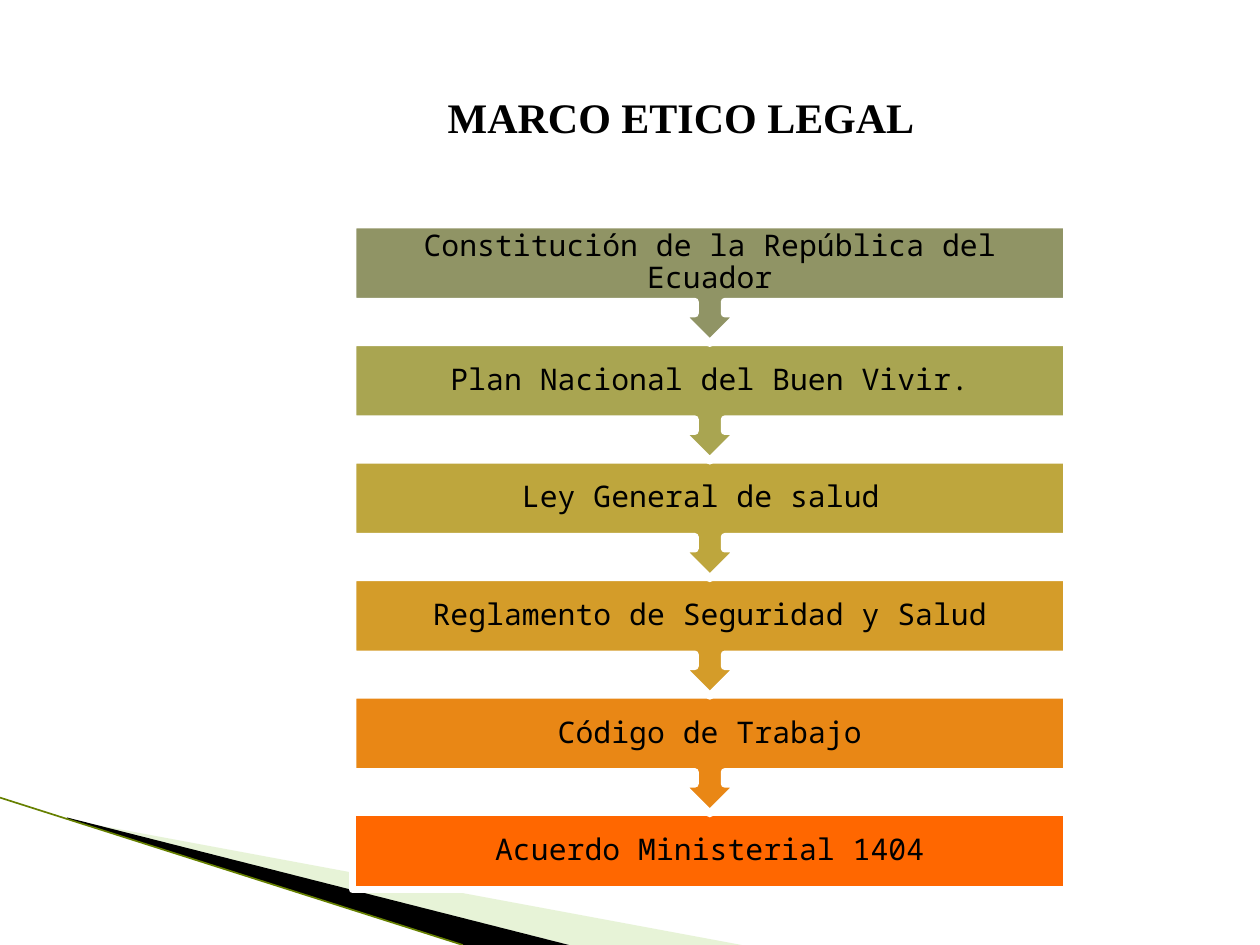
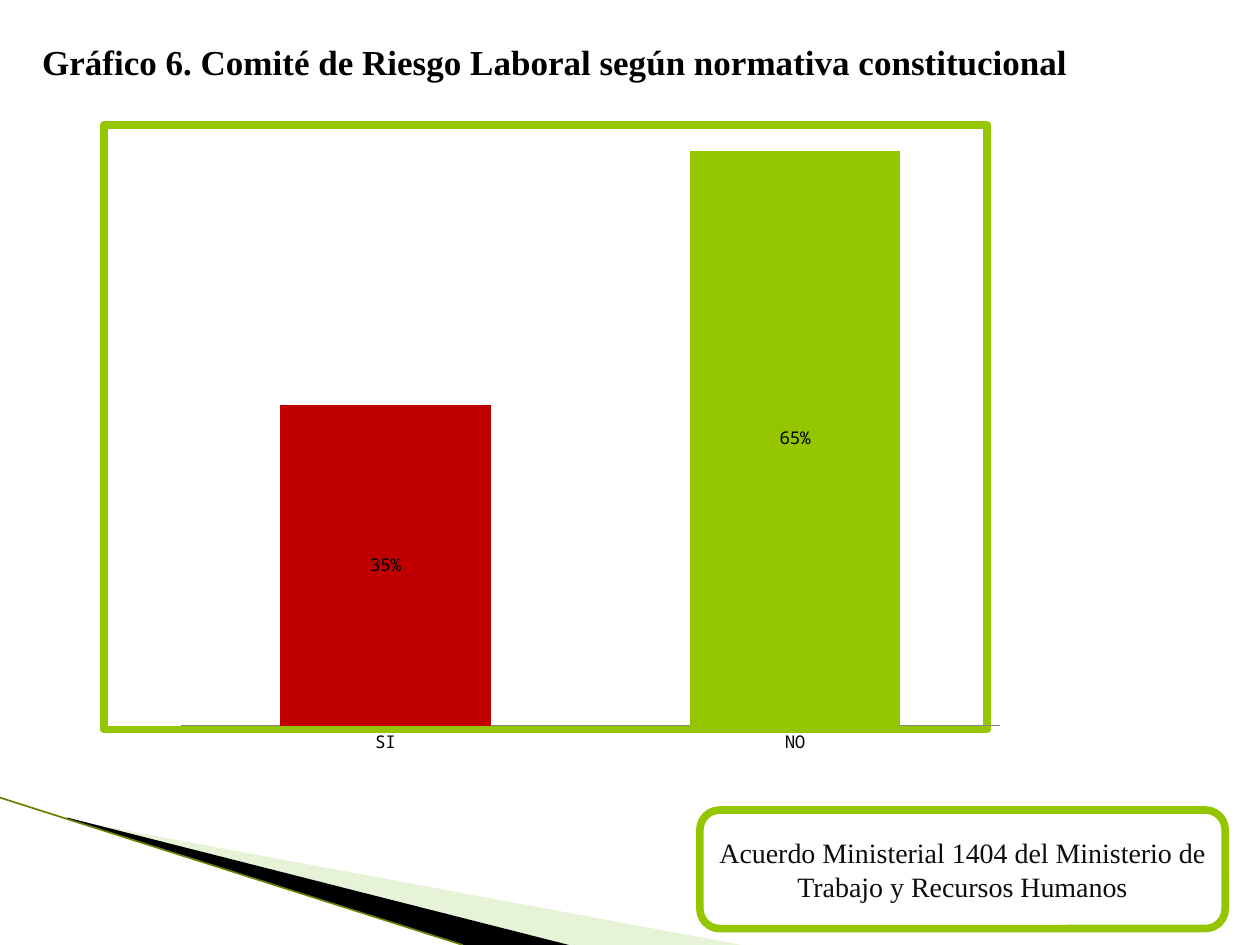
from lxml import etree
from pptx import Presentation
from pptx import util as u
from pptx.chart.data import CategoryChartData
from pptx.dml.color import RGBColor
from pptx.enum import chart as charts, shapes, text
from pptx.oxml import parse_xml
from pptx.oxml.ns import nsdecls, qn

SERIF, MONO = "Times New Roman", "Noto Sans Mono"
BLACK, WHITE, GREEN, RED = "000000", "FFFFFF", "94C600", "C00000"
BORDER = 4.33
LAWS = [
    ("Constitución de la República del Ecuador", "909465"),
    ("Plan Nacional del Buen Vivir.", "A9A551"),
    ("Ley General de salud ", "BEA63D"),
    ("Reglamento de Seguridad y Salud", "D49C29"),
    ("Código de Trabajo", "E98715"),
    ("Acuerdo Ministerial 1404", "FF6700"),
]


def paint(color_format, hex_color):
    """Set a colour from a hex string."""
    color_format.rgb = RGBColor.from_string(hex_color)


def fill_solid(fill, hex_color):
    """Give a fill one solid colour."""
    fill.solid()
    paint(fill.fore_color, hex_color)


def style_font(font, name, size, color=BLACK, bold=False):
    """Set the face, size, colour and weight of a font."""
    font.name, font.size, font.bold = name, u.Pt(size), bold
    paint(font.color, color)


def write(frame, wording, name, size, color=BLACK, bold=False, align=text.PP_ALIGN.CENTER):
    """Put one formatted paragraph in a text frame and return it."""
    frame.word_wrap = True
    para = frame.paragraphs[0]
    para.text = wording
    para.alignment = align
    for span in para.runs:
        style_font(span.font, name, size, color, bold)
    return para


def add_title(slide, wording, left, top, width, height, size, align):
    """Add a bold serif title."""
    box = slide.shapes.add_textbox(u.Cm(left), u.Cm(top), u.Cm(width), u.Cm(height))
    write(box.text_frame, wording, SERIF, size, bold=True, align=align)


def add_box(slide, kind, left, top, width, height, fill, line):
    """Add a filled preset shape with a thick border."""
    box = slide.shapes.add_shape(kind, u.Cm(left), u.Cm(top), u.Cm(width), u.Cm(height))
    box.shadow.inherit = False
    fill_solid(box.fill, fill)
    paint(box.line.color, line)
    box.line.width = u.Pt(BORDER)
    box.text_frame.vertical_anchor = text.MSO_ANCHOR.MIDDLE
    return box


def add_wedge(slide, points, color, opacity=100):
    """Add a borderless polygon, optionally see-through."""
    corners = [(u.Cm(x), u.Cm(y)) for x, y in points]
    builder = slide.shapes.build_freeform(*corners[0])
    builder.add_line_segments(corners[1:])
    wedge = builder.convert_to_shape()
    wedge.shadow.inherit = False
    fill_solid(wedge.fill, color)
    wedge.line.fill.background()
    if opacity < 100:
        tint = wedge.fill._xPr.find(qn("a:solidFill"))[0]
        etree.SubElement(tint, qn("a:alpha")).set("val", str(opacity * 1000))


def add_decoration(slide):
    """Draw the wedges and the line in the lower left corner."""
    add_wedge(slide, [(1.4, 16.53), (14.95, 19.05), (11.47, 19.05), (1.4, 16.51)], "C3E19D", 40)
    add_wedge(slide, [(1.35, 16.48), (11.47, 19.05), (9.35, 19.05), (1.37, 16.51)], BLACK)
    edge = slide.shapes.add_connector(
        shapes.MSO_CONNECTOR.STRAIGHT, u.Cm(0), u.Cm(16.08), u.Cm(9.33), u.Cm(19.05))
    paint(edge.line.color, "668000")
    edge.line.width = u.Pt(0.95)
    etree.SubElement(edge._element.spPr, qn("a:effectLst"))


def add_slide(deck):
    """Add a blank slide with the shared decoration."""
    slide = deck.slides.add_slide(deck.slide_layouts[6])
    add_decoration(slide)
    return slide


def add_law_chain(slide):
    """Stack the laws as callouts that point to the next one, the last as a rectangle."""
    top, pitch = 4.53, 2.37
    last = len(LAWS) - 1
    for index, (law, color) in reversed(list(enumerate(LAWS))):
        kind, height = shapes.MSO_SHAPE.DOWN_ARROW_CALLOUT, 2.39
        if index == last:
            kind, height = shapes.MSO_SHAPE.RECTANGLE, 1.55
        box = add_box(slide, kind, 7.11, top + index * pitch, 14.4, height, color, WHITE)
        frame = box.text_frame
        frame.margin_left = frame.margin_right = u.Cm(0.33)
        frame.margin_top = frame.margin_bottom = u.Cm(0)
        write(frame, law, MONO, 17).line_spacing = 0.9


def place_plot(chart, left, top, width, height):
    """Fix the inner plot area as fractions of the chart."""
    plot_area = chart._chartSpace.chart.plotArea
    for layout in plot_area.findall(qn("c:layout")):
        plot_area.remove(layout)
    sizes = {"x": left, "y": top, "w": width, "h": height}
    values = "".join(f'<c:{key} val="{value}"/>' for key, value in sizes.items())
    plot_area.insert(0, parse_xml(
        f'<c:layout {nsdecls("c")}><c:manualLayout><c:layoutTarget val="inner"/>'
        f'<c:xMode val="edge"/><c:yMode val="edge"/>{values}</c:manualLayout></c:layout>'))


def add_committee_chart(slide):
    """Add the column chart of yes and no answers."""
    data = CategoryChartData()
    data.categories = ["SI", "NO"]
    data.add_series("Series 1", [19, 34])
    chart = slide.shapes.add_chart(
        charts.XL_CHART_TYPE.COLUMN_STACKED,
        u.Cm(3.3), u.Cm(0.71), u.Cm(17.2), u.Cm(14.81), data).chart
    style_font(chart.font, MONO, 10)
    chart.has_legend = chart.has_title = False
    place_plot(chart, 0.02, 0.02, 0.96, 0.92)

    chart.value_axis.visible = False
    chart.value_axis.has_major_gridlines = False
    chart.category_axis.major_tick_mark = charts.XL_TICK_MARK.NONE
    paint(chart.category_axis.format.line.color, "868686")

    plot = chart.plots[0]
    plot.gap_width, plot.overlap, plot.vary_by_categories = 95, 100, False
    series = plot.series[0]
    fill_solid(series.format.fill, GREEN)
    labels = series.data_labels
    labels.show_value = True
    labels.position = charts.XL_LABEL_POSITION.CENTER
    style_font(labels.font, MONO, 10)
    fill_solid(series.points[0].format.fill, RED)
    for index, share in enumerate(["35%", "65%"]):
        label = series.points[index].data_label
        label.text_frame.text = share
        style_font(label.text_frame.paragraphs[0].runs[0].font, MONO, 10)
        label.position = charts.XL_LABEL_POSITION.CENTER


def build_legal_slide(deck):
    """Build the slide on the legal framework."""
    slide = add_slide(deck)
    add_title(slide, "MARCO ETICO LEGAL", 7.43, 1.73, 12.6, 3.33, 24, text.PP_ALIGN.CENTER)
    add_law_chain(slide)


def build_committee_slide(deck):
    """Build the slide on the labour risk committee."""
    slide = add_slide(deck)
    add_box(slide, shapes.MSO_SHAPE.RECTANGLE, 2.1, 2.52, 17.8, 12.19, WHITE, GREEN)
    add_committee_chart(slide)
    add_title(slide, "Gráfico 6. Comité de Riesgo Laboral según normativa constitucional",
              0.6, 0.69, 24.38, 3.25, 20, text.PP_ALIGN.LEFT)
    note = add_box(slide, shapes.MSO_SHAPE.ROUNDED_RECTANGLE,
                   14.11, 16.33, 10.59, 2.39, WHITE, GREEN)
    write(note.text_frame, "Acuerdo Ministerial 1404 del Ministerio de Trabajo y Recursos Humanos",
          SERIF, 16, "0D0D0D")


def main():
    """Build and save the deck."""
    deck = Presentation()
    deck.slide_width, deck.slide_height = u.Cm(25.4), u.Cm(19.05)
    build_legal_slide(deck)
    build_committee_slide(deck)
    deck.save("out.pptx")


if __name__ == "__main__":
    main()
